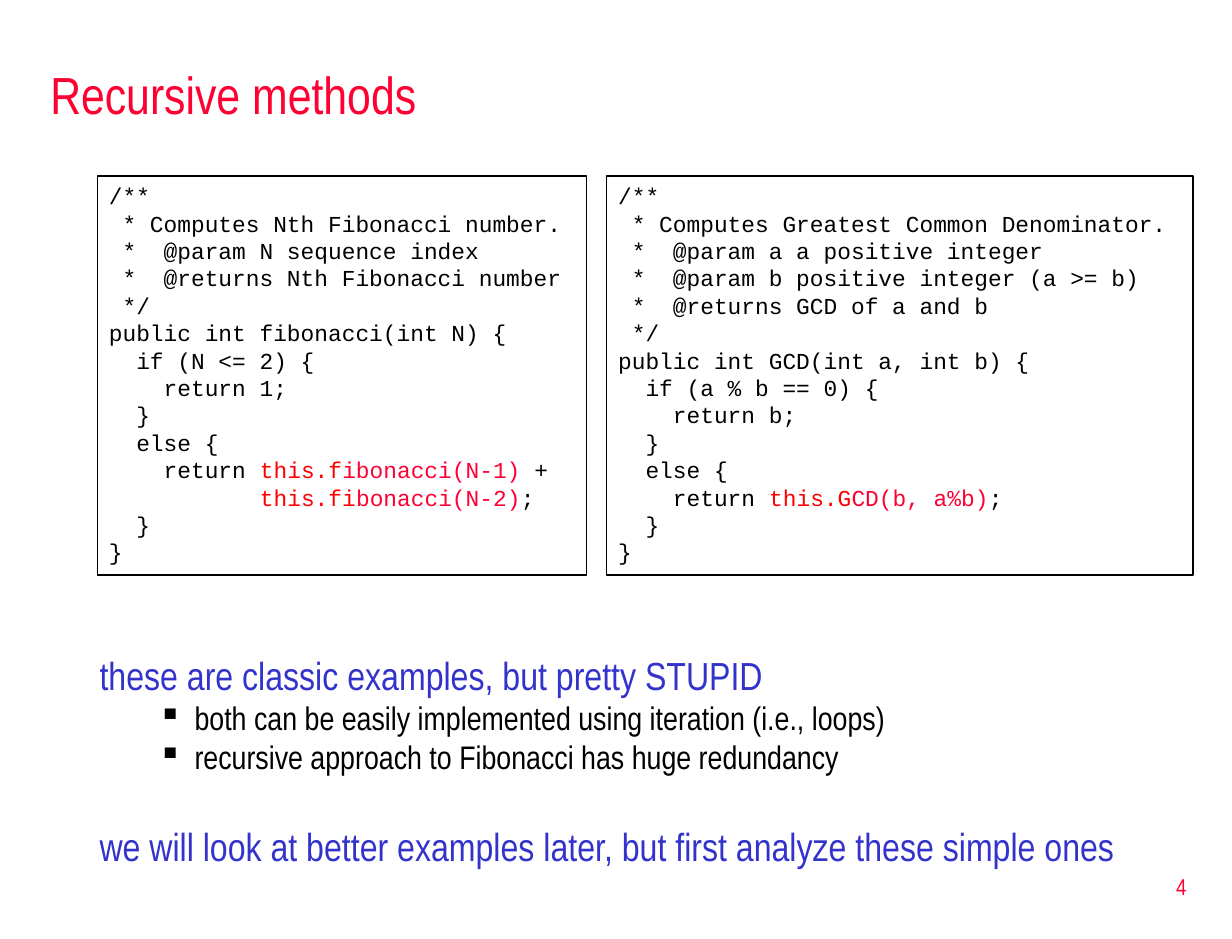
from dataclasses import dataclass

from lxml.etree import SubElement
from pptx import Presentation
from pptx.dml.color import RGBColor
from pptx.enum.shapes import MSO_SHAPE as Shape
from pptx.enum.text import MSO_ANCHOR as Anchor, PP_ALIGN as Align
from pptx.oxml.ns import qn
from pptx.util import Inches, Pt


@dataclass(frozen=True)
class Theme:
    accent: str = "FF0033"
    call: str = "FF0000"
    heading: str = "3333CC"
    ink: str = "000000"
    body_font: str = "Arial Narrow"
    code_font: str = "Courier New"
    title_size: int = 32
    heading_size: int = 24
    bullet_size: int = 20
    small_size: int = 14


THEME = Theme()

# Code lines: plain text, or (text, colour) pieces where calls stand out
FIBONACCI = [
    "/**",
    " * Computes Nth Fibonacci number.",
    " *  @param N sequence index",
    " *  @returns Nth Fibonacci number",
    " */",
    "public int fibonacci(int N) {",
    "  if (N <= 2) {",
    "    return 1;",
    "  }",
    "  else {",
    [("    return ", THEME.ink), ("this.f", THEME.call),
     ("ibonacci(N-1)", THEME.accent), (" +", THEME.ink)],
    [("           ", THEME.ink), ("this.fi", THEME.call),
     ("bonacci(N-2)", THEME.accent), (";", THEME.ink)],
    "  }",
    "}",
]
GCD = [
    "/**",
    " * Computes Greatest Common Denominator.",
    " *  @param a a positive integer",
    " *  @param b positive integer (a >= b)",
    " *  @returns GCD of a and b",
    " */",
    "public int GCD(int a, int b) {",
    "  if (a % b == 0) {",
    "    return b;",
    "  }",
    "  else {",
    [("    return ", THEME.ink), ("this.G", THEME.call),
     ("CD(b, a%b)", THEME.accent), (";", THEME.ink)],
    "  }",
    "}",
]

# Body lines: level, text, space before in points (None for the usual gap)
BODY = [
    (0, "these are classic examples, but pretty STUPID", None),
    (1, "both can be easily implemented using iteration (i.e., loops)", None),
    (1, "recursive approach to Fibonacci has huge redundancy", None),
    (0, "we will look at better examples later, but first analyze these simple ones", 28.5),
]


def add_span(para, text, *, size, color, font=THEME.body_font):
    span = para.add_run()
    span.text = text
    span.font.name = font
    span.font.size = Pt(size)
    span.font.color.rgb = RGBColor.from_string(color)


def paragraphs(frame, items):
    """Pair each item with its paragraph, using the first one already there."""
    for index, item in enumerate(items):
        yield (frame.add_paragraph() if index else frame.paragraphs[0]), item


class SlideBuilder:
    def __init__(self, page, theme):
        self.page = page
        self.theme = theme

    def text_box(self, left, top, width, height, anchor=Anchor.TOP):
        box = self.page.shapes.add_textbox(
            Inches(left), Inches(top), Inches(width), Inches(height))
        frame = box.text_frame
        frame.word_wrap = True
        frame.vertical_anchor = anchor
        return frame

    def label(self, text, *place, size, align=Align.LEFT):
        para = self.text_box(*place, anchor=Anchor.MIDDLE).paragraphs[0]
        para.alignment = align
        add_span(para, text, size=size, color=self.theme.accent)

    def code_box(self, lines, left, top, width, height):
        box = self.page.shapes.add_shape(
            Shape.RECTANGLE, Inches(left), Inches(top), Inches(width), Inches(height))
        box.shadow.inherit = False
        box.fill.background()
        box.line.color.rgb = RGBColor.from_string(self.theme.ink)
        box.line.width = Pt(1)
        frame = box.text_frame
        frame.word_wrap = True
        frame.vertical_anchor = Anchor.TOP
        for para, line in paragraphs(frame, lines):
            para.alignment = Align.LEFT
            pieces = [(line, self.theme.ink)] if isinstance(line, str) else line
            for text, color in pieces:
                add_span(para, text, size=self.theme.small_size, color=color,
                         font=self.theme.code_font)

    def body(self, items, *place):
        for para, (level, text, gap) in paragraphs(self.text_box(*place), items):
            size = self.theme.bullet_size if level else self.theme.heading_size
            para.level = level
            para.space_before = Pt(gap or round(size * 0.23, 1))
            if level:
                para.line_spacing = 0.8
                self.bullet(para, 0.81, 0.31)
            add_span(para, text, size=size,
                     color=self.theme.ink if level else self.theme.heading)

    def bullet(self, para, margin, hang):
        props = para._p.get_or_add_pPr()
        props.set("marL", str(Inches(margin)))
        props.set("indent", str(-Inches(hang)))
        SubElement(props, qn("a:buChar")).set("char", "▪")


def main():
    deck = Presentation()
    deck.slide_width, deck.slide_height = Inches(10.5), Inches(8)
    builder = SlideBuilder(deck.slides.add_slide(deck.slide_layouts[6]), THEME)

    # Page number and title
    builder.label("4", 8.02, 7.29, 2.19, 0.53, size=THEME.small_size, align=Align.RIGHT)
    builder.label("Recursive methods", 0.33, 0.42, 9.92, 0.75, size=THEME.title_size)

    # Remarks below the code
    builder.body(BODY, 0.75, 5.5, 9.33, 2.17)

    # The two methods side by side
    for lines, left, width in ((FIBONACCI, 0.83, 4.17), (GCD, 5.17, 5)):
        builder.code_box(lines, left, 1.5, width, 3.4)

    deck.save("out.pptx")


if __name__ == "__main__":
    main()
